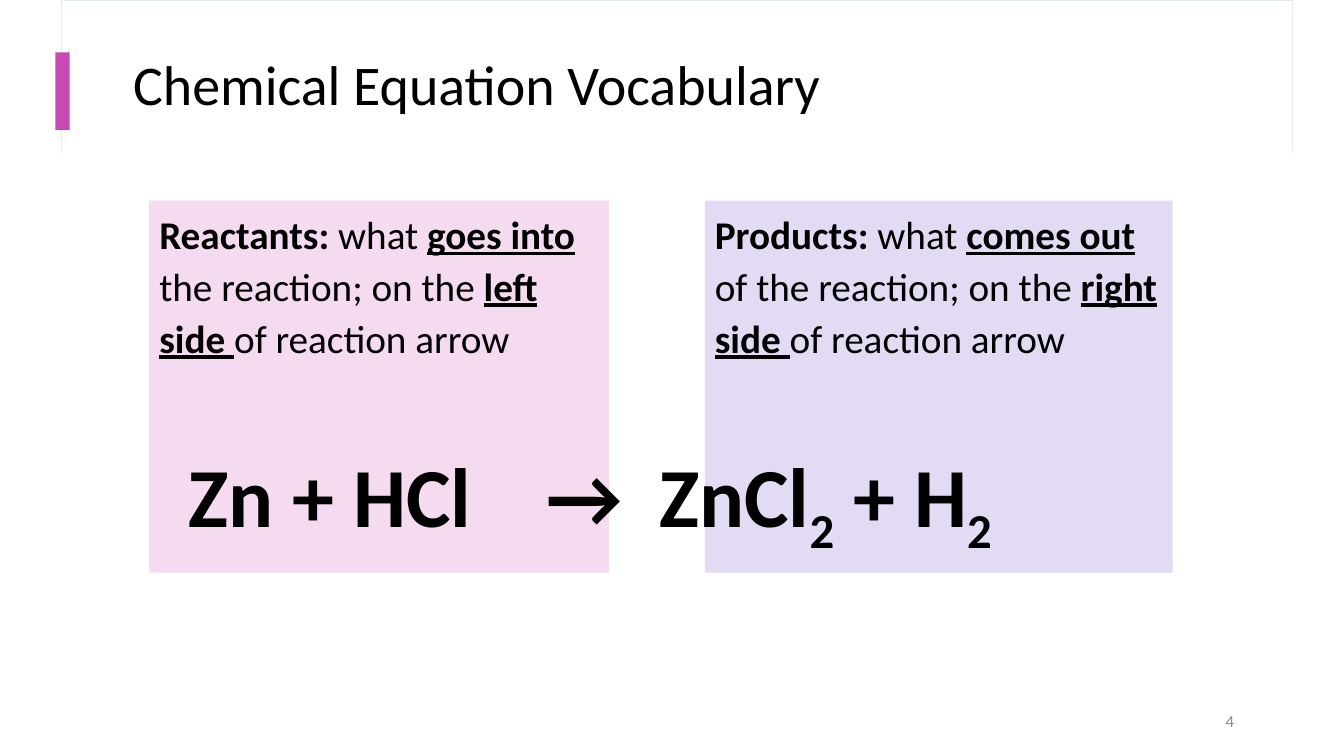
from dataclasses import dataclass
from lxml import etree
from pptx import Presentation
from pptx.dml.color import RGBColor
from pptx.enum import shapes, text
from pptx.oxml import ns
from pptx.util import Inches, Pt


@dataclass(frozen=True)
class Theme:
    font: str = "Calibri"
    ink: str = "000000"
    paper: str = "FFFFFF"
    edge: str = "E5EBF0"
    accent: str = "C749B3"
    pink: str = "F4DBF0"
    violet: str = "E3DBF4"
    gray: str = "8C8C8C"
    title: int = 40
    body: int = 28
    formula: int = 60
    number: int = 12


look = Theme()


def style(para, size, color=look.ink, bold=None):
    font = para.font
    font.name, font.size, font.bold = look.font, Pt(size), bold
    font.color.rgb = RGBColor.from_string(color)


def place(shape, left, top, width, height):
    shape.left, shape.top = Inches(left), Inches(top)
    shape.width, shape.height = Inches(width), Inches(height)


prs = Presentation()
prs.slide_width, prs.slide_height = Inches(13.33), Inches(7.5)
slide = prs.slides.add_slide(prs.slide_layouts[3])
tree = slide.shapes

# Header panel and accent bar, behind the placeholders
bars = [
    ((0.61, 0, 12.21, 1.51), look.paper, look.edge),
    ((0.62, 0.02, 12.19, 1.51), look.paper, None),
    ((0.55, 0.52, 0.14, 0.77), look.accent, None),
]
for order, (area, fill, line) in enumerate(bars):
    bar = tree.add_shape(shapes.MSO_SHAPE.RECTANGLE, *map(Inches, area))
    bar.shadow.inherit = False
    bar.fill.solid()
    bar.fill.fore_color.rgb = RGBColor.from_string(fill)
    if line:
        bar.line.color.rgb = RGBColor.from_string(line)
        bar.line.width = Pt(0.75)
    else:
        bar.line.fill.background()
    tree.element.insert(2 + order, bar.element)

# Title
title = tree.title
place(title, 1.22, 0.22, 11.12, 1.29)
frame = title.text_frame
frame.text = "Chemical Equation Vocabulary"
frame.auto_size = text.MSO_AUTO_SIZE.NONE
frame.vertical_anchor = text.MSO_ANCHOR.MIDDLE
para = frame.paragraphs[0]
para.alignment = text.PP_ALIGN.LEFT
para.line_spacing = 0.9
style(para, look.title)

# Definitions: plain and underlined runs alternate after the term
cards = [
    (1, 6.99, 4.64, look.violet, "Products: ",
     ["what ", "comes out", " of the reaction; on the ", "right side ", "of reaction arrow"]),
    (2, 1.48, 4.56, look.pink, "Reactants: ",
     ["what ", "goes into", " the reaction; on the ", "left side ", "of reaction arrow"]),
]
for key, left, width, fill, term, parts in cards:
    card = slide.placeholders[key]
    place(card, left, 1.99, width, 3.69)
    card.fill.solid()
    card.fill.fore_color.rgb = RGBColor.from_string(fill)
    card.text_frame.auto_size = text.MSO_AUTO_SIZE.NONE
    para = card.text_frame.paragraphs[0]
    para.line_spacing, para.space_before = 1.1, Pt(10)
    props = para._p.get_or_add_pPr()
    props.set("marL", "0")
    props.set("indent", "0")
    etree.SubElement(props, ns.qn("a:buNone"))
    style(para, look.body)
    run = para.add_run()
    run.text, run.font.bold = term, True
    for spot, words in enumerate(parts):
        run = para.add_run()
        run.text = words
        run.font.bold = run.font.underline = spot % 2 == 1

# Equation, with tab stops for the arrow and the products
box = tree.add_textbox(*map(Inches, (1.77, 4.24, 9.79, 1.53)))
box.text_frame.word_wrap = True
para = box.text_frame.paragraphs[0]
para.line_spacing, para.space_before = 1.1, Pt(10)
tabs = etree.SubElement(para._p.get_or_add_pPr(), ns.qn("a:tabLst"))
for stop in (3.55, 4.67):
    etree.SubElement(tabs, ns.qn("a:tab"), pos=str(Inches(stop)), algn="l")
style(para, look.formula, bold=True)
for words in ("Zn + HCl\t→\tZnCl", "2", " + H", "2"):
    run = para.add_run()
    run.text = words
    if words == "2":
        run.font._element.set("baseline", "-25000")

# Slide number
box = tree.add_textbox(*map(Inches, (9.34, 6.95, 3, 0.4)))
box.text_frame.word_wrap = True
box.text_frame.vertical_anchor = text.MSO_ANCHOR.MIDDLE
para = box.text_frame.paragraphs[0]
para.alignment = text.PP_ALIGN.RIGHT
para.add_run().text = "4"
style(para, look.number, look.gray)

prs.save("out.pptx")
